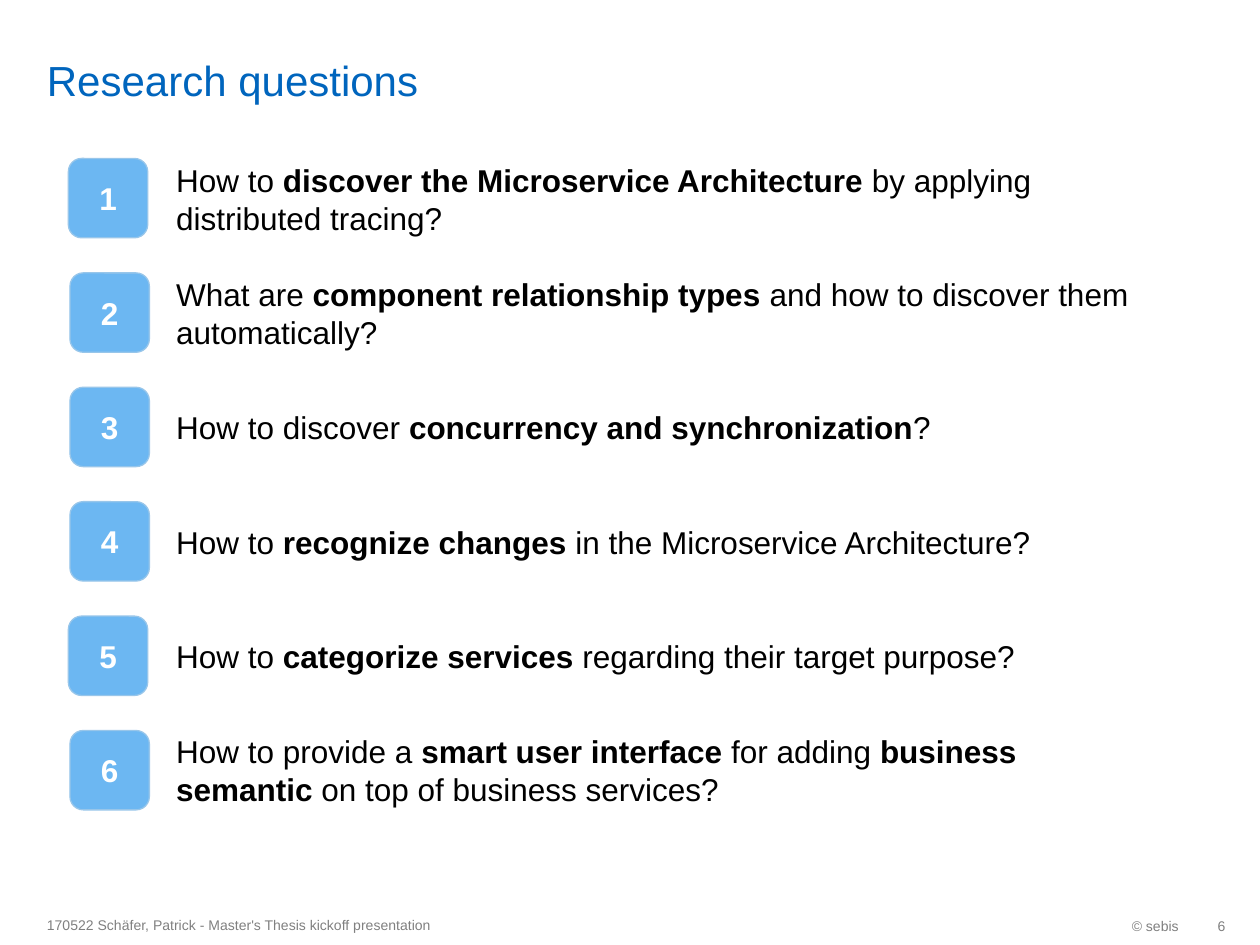
from pptx import Presentation
from pptx.dml.color import RGBColor
from pptx.enum.shapes import MSO_SHAPE
from pptx.enum.text import MSO_ANCHOR, PP_ALIGN
from pptx.util import Inches, Pt

COLORS = {"title": "0065BD", "body": "000000", "footer": "808080",
          "badge": "6CB7F2", "edge": "98C6EA", "number": "FFFFFF"}

deck = Presentation()
deck.slide_width, deck.slide_height = Inches(10), Inches(7.5)
slide = deck.slides.add_slide(deck.slide_layouts[6])
COL = deck.slide_width / 100
ROW = deck.slide_height / 75


def grid(left, top, width, height):
    return [round(n * unit) for n, unit in
            zip((left, top, width, height), (COL, ROW, COL, ROW))]


def write(holder, *paragraphs, size, color, bold=False, align=PP_ALIGN.LEFT,
          anchor=MSO_ANCHOR.MIDDLE, gaps=(0,), right=0.1, vertical=0.05):
    frame = holder.text_frame
    frame.word_wrap = True
    frame.vertical_anchor = anchor
    frame.margin_left, frame.margin_right = Inches(0.1), Inches(right)
    frame.margin_top = frame.margin_bottom = Inches(vertical)
    for index, (text, gap) in enumerate(zip(paragraphs, gaps)):
        paragraph = frame.paragraphs[0] if index == 0 else frame.add_paragraph()
        paragraph.alignment = align
        paragraph.space_before = Pt(gap)
        for part, words in enumerate(text.split("*")):
            run = paragraph.add_run()
            run.text = words
            run.font.name = "Arial"
            run.font.size = Pt(size)
            run.font.bold = bold or part % 2 == 1
            run.font.color.rgb = RGBColor.from_string(COLORS[color])


questions = [
    "How to *discover the Microservice Architecture *by applying distributed tracing?",
    "What are *component relationship types *and how to discover them automatically?",
    "How to discover *concurrency and synchronization*?",
    "How to *recognize changes* in the Microservice Architecture?",
    "How to *categorize services *regarding their target purpose?",
    "How to provide a *smart user interface *for adding *business semantic *"
    "on top of business services?",
]
write(slide.shapes.add_textbox(*grid(13, 12.3, 78, 59.1)), *questions,
      size=18, color="body", anchor=MSO_ANCHOR.TOP,
      gaps=(0, 22, 32.5, 44, 44, 32.5))

write(slide.shapes.add_textbox(*grid(2.74, 0.45, 82.4, 7.9)), "Research questions",
      size=24, color="title", anchor=MSO_ANCHOR.BOTTOM, vertical=0)

footers = [
    ("© sebis", (76.95, 71.85, 17.6, 3.2), PP_ALIGN.RIGHT, 0.1),
    ("6", (94.55, 71.85, 2.7, 3.2), PP_ALIGN.RIGHT, 0),
    ("170522 Schäfer, Patrick - Master's Thesis kickoff presentation",
     (2.74, 71.8, 47.3, 3.2), PP_ALIGN.LEFT, 0.1),
]
for text, place, align, right in footers:
    write(slide.shapes.add_textbox(*grid(*place)), text,
          size=8, color="footer", align=align, right=right)

for index in range(len(questions)):
    left = 5.43 if index % 4 == 0 else 5.56
    badge = slide.shapes.add_shape(MSO_SHAPE.ROUNDED_RECTANGLE,
                                   *grid(left, 12.58 + 9.08 * index, 6.3, 6.3))
    badge.shadow.inherit = False
    badge.fill.solid()
    badge.fill.fore_color.rgb = RGBColor.from_string(COLORS["badge"])
    badge.line.color.rgb = RGBColor.from_string(COLORS["edge"])
    badge.line.width = Pt(0.75)
    write(badge, str(index + 1), size=18, color="number", bold=True,
          align=PP_ALIGN.CENTER)

deck.save("out.pptx")
